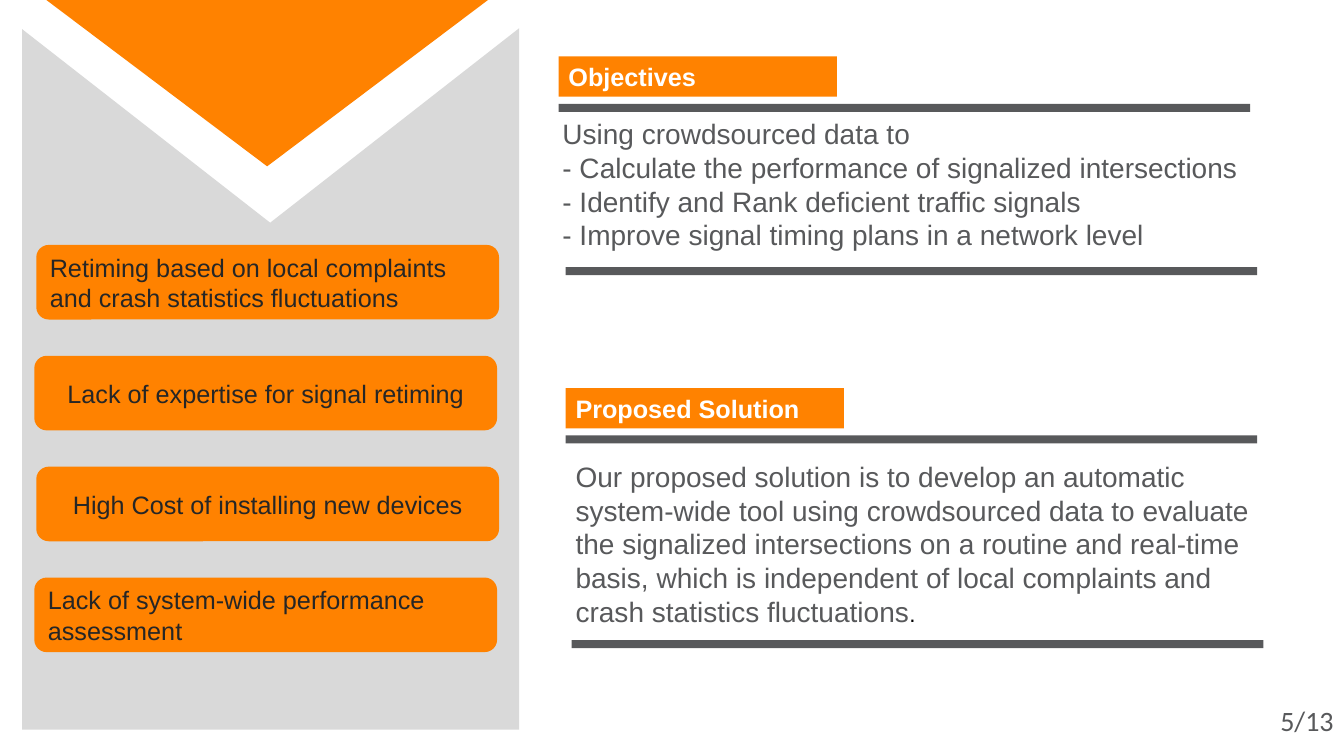
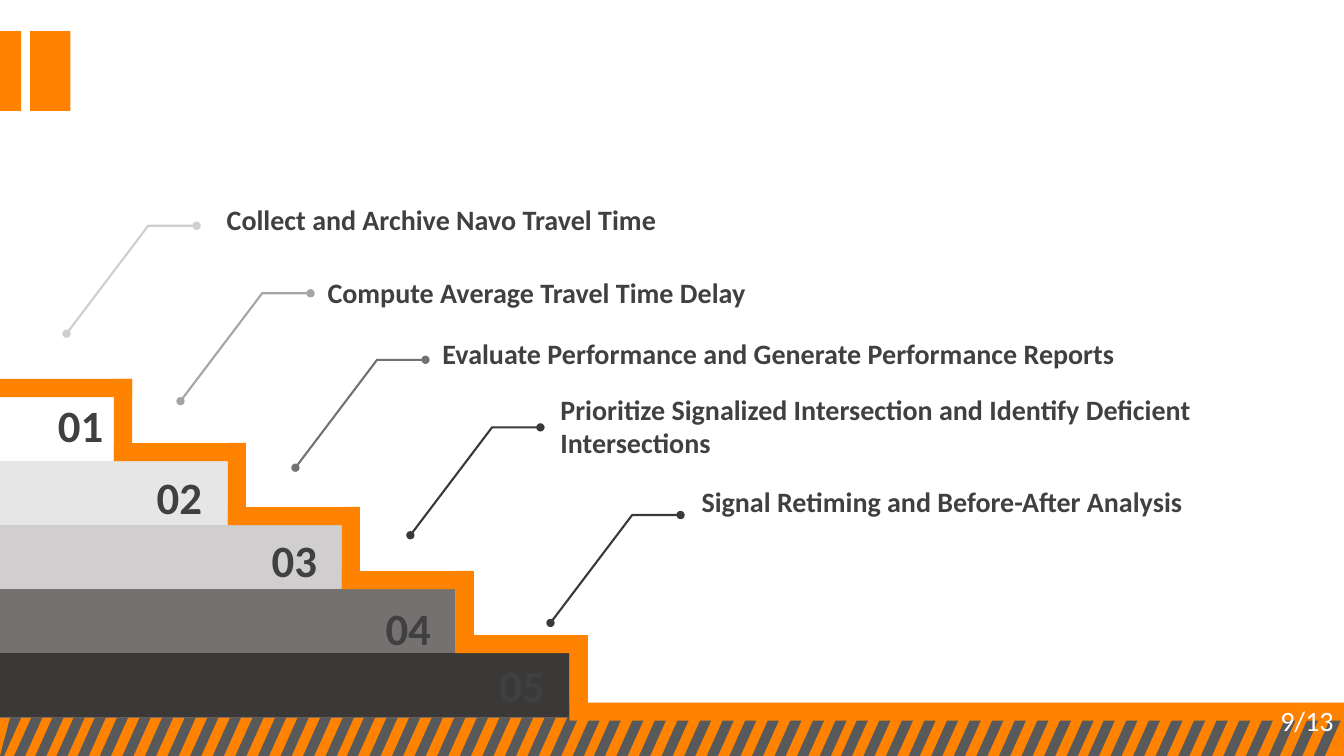
"""Build two slides on traffic signal retiming."""
from typing import NamedTuple

from lxml import etree
from pptx import Presentation
from pptx.dml.color import RGBColor
from pptx.enum.shapes import MSO_SHAPE
from pptx.enum.text import MSO_ANCHOR, PP_ALIGN
from pptx.oxml import parse_xml
from pptx.oxml.ns import nsdecls, qn
from pptx.util import Inches, Pt

RECT, ROUND = MSO_SHAPE.RECTANGLE, MSO_SHAPE.ROUNDED_RECTANGLE
LEFT, CENTER = PP_ALIGN.LEFT, PP_ALIGN.CENTER
TOP, MIDDLE = MSO_ANCHOR.TOP, MSO_ANCHOR.MIDDLE
WIDE, HIGH = 13.33, 7.5
ORANGE, SLATE, WHITE, BLACK = "FF8200", "58595B", "FFFFFF", "000000"
DARK, INK, PALE = "404040", "262626", "D9D9D9"
RUN, RISE, EDGE = 1.13, 0.635, 0.18
STAIR, BAND = 3.76, 7.12

Point = tuple[float, float]
Box = tuple[float, float, float, float]


class Style(NamedTuple):
    font: str
    size: int
    color: str
    bold: bool = False
    align: PP_ALIGN = LEFT
    anchor: MSO_ANCHOR = TOP
    wrap: bool = True


class Pill(NamedTuple):
    text: str
    align: PP_ALIGN


class Panel(NamedTuple):
    title: str
    left: float
    top: float
    foot: Point
    body: Box
    lines: list[str]


class Step(NamedTuple):
    text: str
    box: Box
    lead: Point
    tint: str
    num: Point
    fill: str


TAG = Style("Arial", 18, WHITE, bold=True, anchor=MIDDLE)
BODY = Style("Arial", 20, SLATE)
LABEL = Style("Calibri", 20, DARK, bold=True)
DIGIT = Style("Calibri", 32, DARK, bold=True, align=CENTER)

PILLS = [
    Pill("Retiming based on local complaints and crash statistics fluctuations", LEFT),
    Pill("Lack of expertise for signal retiming", CENTER),
    Pill("High Cost of installing new devices", CENTER),
    Pill("Lack of system-wide performance assessment", LEFT),
]
PANELS = [
    Panel("Objectives", 5.54, 0.56, (5.61, 2.65), (5.48, 1.11, 7.43, 1.45), [
        "Using crowdsourced data to",
        "- Calculate the performance of signalized intersections",
        "- Identify and Rank deficient traffic signals",
        "- Improve signal timing plans in a network level",
    ]),
    Panel("Proposed Solution", 5.61, 3.85, (5.67, 6.35), (5.61, 4.51, 6.99, 1.78), [
        "Our proposed solution is to develop an automatic system-wide tool using "
        "crowdsourced data to evaluate the signalized intersections on a routine "
        "and real-time basis, which is independent of local complaints and crash "
        "statistics fluctuations",
    ]),
]
STEPS = [
    Step("Collect and Archive Navo Travel Time", (2.15, 1.96, 4.48, 0.44),
         (0.66, 2.24), "D0CECE", (0.43, 3.9), WHITE),
    Step("Compute Average Travel Time Delay", (3.15, 2.68, 4.48, 0.44),
         (1.79, 2.91), "A5A5A5", (1.41, 4.61), "E7E6E6"),
    Step("Evaluate Performance and Generate Performance Reports", (4.29, 3.29, 8.8, 0.44),
         (2.93, 3.57), "767171", (2.55, 5.24), "D0CECE"),
    Step("Prioritize Signalized Intersection and Identify Deficient Intersections",
         (5.46, 3.84, 7.63, 0.77), (4.07, 4.24), "3B3838", (3.68, 5.91), "767171"),
    Step("Signal Retiming and Before-After Analysis", (6.86, 4.76, 5.24, 0.44),
         (5.46, 5.11), "3B3838", (4.81, 6.48), "3B3838"),
]


def rgb(code: str) -> RGBColor:
    return RGBColor.from_string(code)


def paint(shape, color: str):
    shape.shadow.inherit = False
    shape.fill.solid()
    shape.fill.fore_color.rgb = rgb(color)
    shape.line.fill.background()
    return shape


def block(slide, box: Box, color: str, kind=RECT):
    return paint(slide.shapes.add_shape(kind, *map(Inches, box)), color)


def write(shape, lines: list[str], style: Style) -> None:
    frame = shape.text_frame
    frame.word_wrap = style.wrap
    frame.vertical_anchor = style.anchor
    frame.text = "\n".join(lines)
    for para in frame.paragraphs:
        para.alignment = style.align
        font = para.font
        font.name, font.size, font.bold = style.font, Pt(style.size), style.bold
        font.color.rgb = rgb(style.color)


def label(slide, box: Box, lines: list[str], style: Style):
    shape = slide.shapes.add_textbox(*map(Inches, box))
    write(shape, lines, style)
    return shape


def trace(slide, paths: list[list[Point]], close: bool = True):
    scaled = [[(Inches(x), Inches(y)) for x, y in path] for path in paths]
    pen = slide.shapes.build_freeform(*scaled[0][0])
    for i, path in enumerate(scaled):
        if i:
            pen.move_to(*path[0])
        pen.add_line_segments(path[1:], close=close)
    return pen.convert_to_shape()


def leader(slide, x: float, y: float, color: str) -> None:
    shape = trace(slide, [[(x, y + 1.07), (x + 0.81, y), (x + 1.29, y)]], close=False)
    shape.shadow.inherit = False
    shape.fill.background()
    shape.line.color.rgb = rgb(color)
    shape.line.width = Pt(1.5)
    line = shape.line._get_or_add_ln()
    for end in ("a:headEnd", "a:tailEnd"):
        etree.SubElement(line, qn(end), type="oval")


def outline(shape, color: str) -> None:
    for run in shape.text_frame.paragraphs[0].runs:
        run._r.get_or_add_rPr().insert(0, parse_xml(
            f'<a:ln {nsdecls("a")} w="12700"><a:solidFill>'
            f'<a:srgbClr val="{color}"/></a:solidFill></a:ln>'))


def number(slide, page: int, color: str) -> None:
    style = Style("Calibri", 20, color, wrap=False)
    label(slide, (12.6, 6.93, 0.74, 0.44), [f"{page}/13"], style)


def hazard(slide) -> None:
    block(slide, (0, BAND, WIDE, HIGH - BAND), ORANGE)
    tops = [13.2 - 2.45 * j - 0.224 * i for j in range(5) for i in range(11)]
    tops += [0.94 - 0.21 * i for i in range(5)]
    bars = [[(x, BAND), (x + 0.11, BAND), (x - 0.06, HIGH), (max(x - 0.17, 0), HIGH)]
            for x in tops]
    paint(trace(slide, bars), SLATE)


def goals(slide) -> None:
    paint(trace(slide, [[(0.22, 7.24), (0.22, 0.29), (2.68, 2.21),
                         (5.15, 0.28), (5.15, 7.24)]]), PALE)
    paint(trace(slide, [[(0.46, 0), (4.84, 0), (2.65, 1.65)]]), ORANGE)
    for i, pill in enumerate(PILLS):
        box = (0.34 if i % 2 else 0.36, 2.43 + 1.1 * i, 4.59, 0.74)
        style = Style("Arial", 18, INK, align=pill.align, anchor=MIDDLE)
        write(block(slide, box, ORANGE, ROUND), [pill.text], style)
    for panel in PANELS:
        for x, y in ((panel.left, panel.top + 0.47), panel.foot):
            block(slide, (x, y, 6.86, 0.08), SLATE)
        tag = block(slide, (panel.left, panel.top, 2.76, 0.4), ORANGE)
        write(tag, [panel.title], TAG)
        body = label(slide, panel.body, panel.lines, BODY)
    dot = body.text_frame.paragraphs[0].add_run()
    dot.text = "."
    dot.font.size = Pt(16)
    dot.font.color.rgb = rgb(BLACK)
    number(slide, 5, SLATE)


def stairs(slide) -> None:
    for x, wide in ((0, 0.21), (0.3, 0.4)):
        block(slide, (x, 0.31, wide, 0.79), ORANGE)
    hazard(slide)
    start = RUN * len(STEPS)
    block(slide, (start, 6.97, WIDE - start, EDGE), ORANGE)
    for i, step in enumerate(STEPS):
        y, end = STAIR + RISE * i, RUN * (i + 1)
        block(slide, (0, y + EDGE, end, 0.64), step.fill)
        block(slide, (RUN * i, y, RUN + EDGE, EDGE), ORANGE)
        block(slide, (end, y, EDGE, RISE + EDGE), ORANGE)
    for i, step in enumerate(STEPS, 1):
        outline(label(slide, (*step.num, 0.74, 0.64), [f"{i:02}"], DIGIT), WHITE)
        leader(slide, *step.lead, step.tint)
        label(slide, step.box, [step.text], LABEL)
    number(slide, 9, WHITE)


def main() -> None:
    deck = Presentation()
    deck.slide_width, deck.slide_height = Inches(WIDE), Inches(HIGH)
    for draw in (goals, stairs):
        draw(deck.slides.add_slide(deck.slide_layouts[6]))
    deck.save("out.pptx")


if __name__ == "__main__":
    main()
